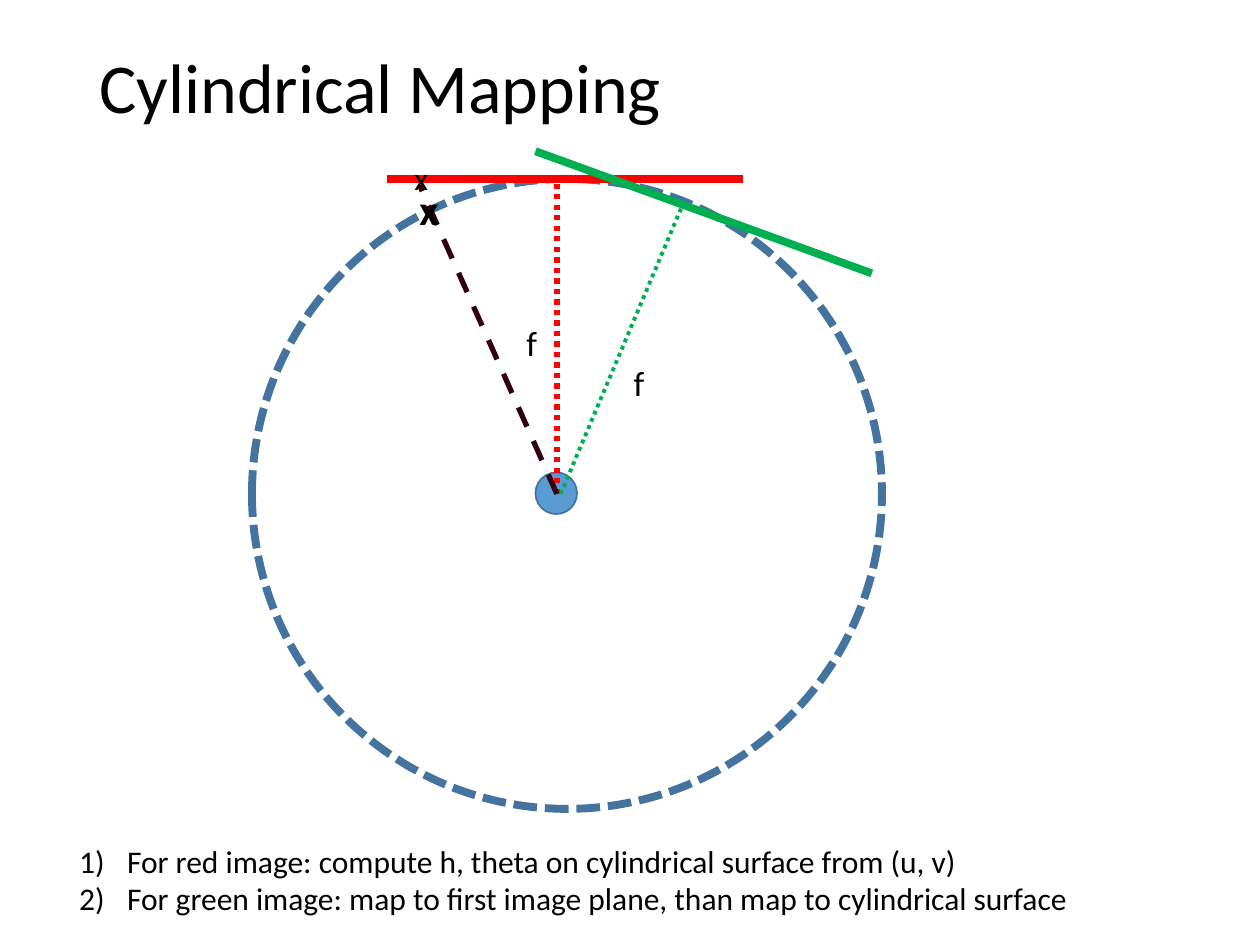
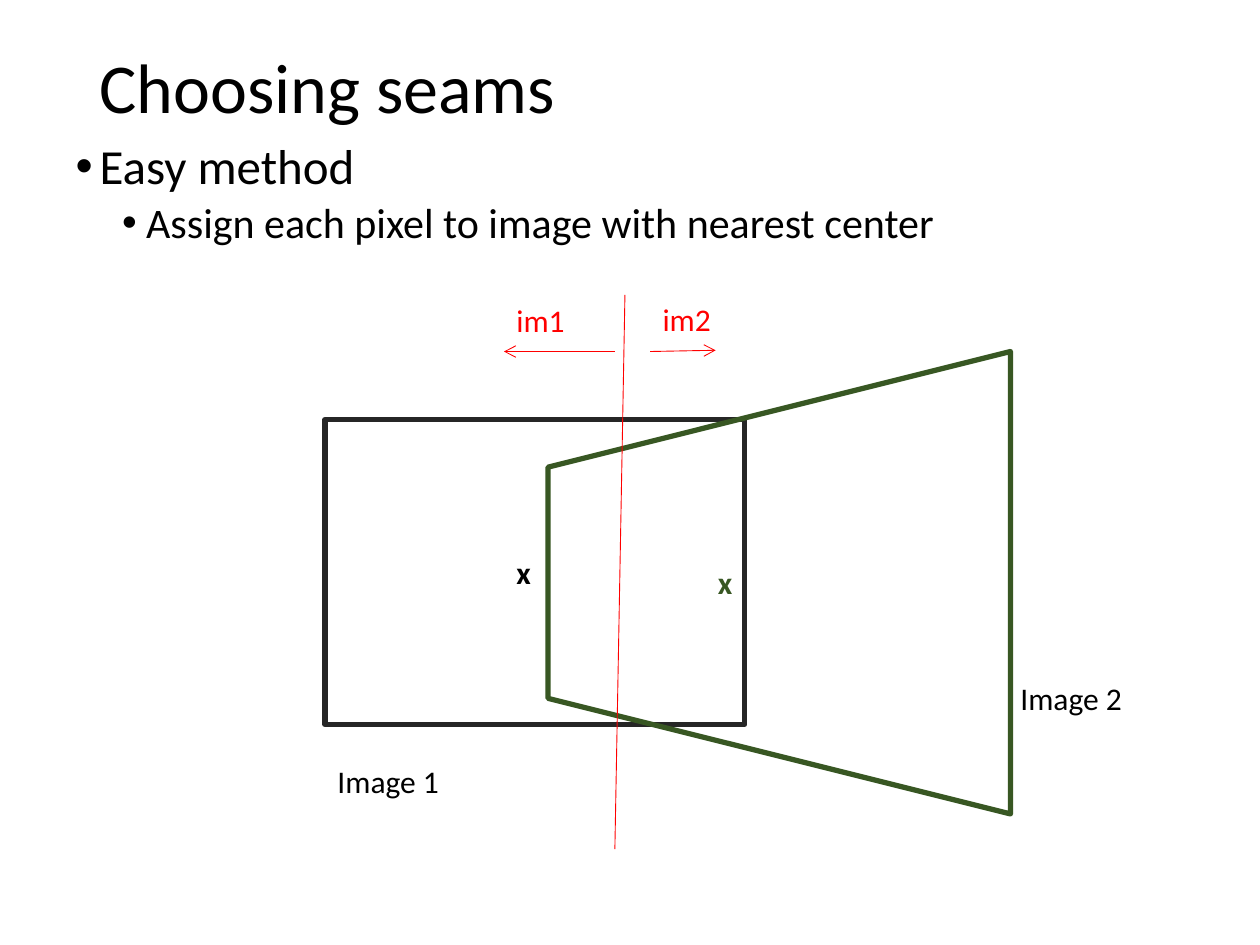
"""Build two slides on cylindrical mapping and choosing seams."""
from lxml import etree
from pptx import Presentation
from pptx.dml.color import RGBColor
from pptx.enum.dml import MSO_LINE
from pptx.enum.shapes import MSO_CONNECTOR, MSO_SHAPE
from pptx.enum.text import MSO_ANCHOR, MSO_AUTO_SIZE, PP_ALIGN
from pptx.oxml.ns import qn
from pptx.util import Inches, Pt

STRAIGHT = MSO_CONNECTOR.STRAIGHT
OVAL, RECTANGLE, TRAPEZOID = MSO_SHAPE.OVAL, MSO_SHAPE.RECTANGLE, MSO_SHAPE.TRAPEZOID
SHORT_DASH, DOT, DASH = MSO_LINE.SQUARE_DOT, MSO_LINE.ROUND_DOT, MSO_LINE.DASH
MIDDLE, LEFT = MSO_ANCHOR.MIDDLE, PP_ALIGN.LEFT
NO_FIT, GROW = MSO_AUTO_SIZE.NONE, MSO_AUTO_SIZE.SHAPE_TO_FIT_TEXT
FONT = "Calibri"
TITLE_ONLY, TITLE_AND_BODY = 5, 1
COLORS = {
    "black": "000000", "white": "FFFFFF", "red": "FF0000", "green": "00B050",
    "blue": "5B9BD5", "steel": "43739E", "maroon": "32000C",
    "charcoal": "262626", "forest": "385723",
}
TITLE_BOX = (0.69, 0, 8.62, 1.45)

MAPPING_TITLE = "Cylindrical Mapping"
CYLINDER_BOX = (2, 1.42, 5, 5)
EYE_BOX = (4.25, 3.75, 0.33, 0.33)
EYE = (4.42, 3.92)
IMAGE_PLANES = [
    ((3.07, 1.42), (5.9, 1.42), "red", 4.5),
    ((4.25, 1.2), (6.92, 2.17), "green", 4.5),
]
RAYS = [
    (EYE, (4.42, 1.42), "red", 3, DOT),
    ((4.45, 3.92), (5.42, 1.62), "green", 2.25, DOT),
    (EYE, (3.33, 1.47), "maroon", 3, DASH),
]
MAPPING_LABELS = [
    ("f", (4.08, 2.5, 0.28, 0.44), 20, "black", False),
    ("f", (4.93, 2.82, 0.28, 0.44), 20, "black", False),
    ("x", (3.19, 1.21, 0.33, 0.4), 18, "black", False),
    ("x", (3.23, 1.41, 0.39, 0.5), 24, "black", True),
]
STEPS_BOX = (0.53, 6.63, 8.81, 0.71)
STEPS = [
    "For red image: compute h, theta on cylindrical surface from (u, v)",
    "For green image: map to first image plane, than map to cylindrical surface",
]

SEAMS_TITLE = "Choosing seams"
METHOD_BOX = (0.5, 1.08, 9, 5.62)
METHOD = [("Easy method", 0, 28, 0.19, 0),
          ("Assign each pixel to image with nearest center", 1, 24, 0.56, 3.8)]
IMAGE_1_BOX = (2.58, 3.33, 3.33, 2.42)
IMAGE_2_BOX = (4.35, 2.79, 3.67, 3.67)
SEAM = ((4.96, 2.34), (4.88, 6.74))
SIDES = [((4.88, 2.79), (4, 2.79)), ((5.16, 2.79), (5.68, 2.78))]
SEAM_LABELS = [
    ("Image 1", (2.58, 6, 1.11, 0.4), 18, "black", False),
    ("Image 2", (8, 5.34, 1.11, 0.4), 18, "black", False),
    ("x", (4, 4.34, 0.34, 0.4), 18, "black", True),
    ("x", (5.6, 4.42, 0.34, 0.4), 18, "forest", True),
    ("im1", (4, 2.34, 0.61, 0.4), 18, "red", False),
    ("im2", (5.16, 2.33, 0.61, 0.4), 18, "red", False),
]


def rgb(color):
    return RGBColor.from_string(COLORS[color])


def style(paragraph, size, color="black", bold=False):
    font = paragraph.font
    font.name, font.size, font.bold = FONT, Pt(size), bold
    font.color.rgb = rgb(color)


def add_marker(paragraph, tag, attributes, left, hanging):
    properties = paragraph._p.get_or_add_pPr()
    properties.set("marL", str(Inches(left)))
    properties.set("indent", str(-Inches(hanging)))
    etree.SubElement(properties, qn(tag), attributes)


def place(shape, box):
    shape.left, shape.top, shape.width, shape.height = map(Inches, box)


def add_slide(deck, layout, title):
    slide = deck.slides.add_slide(deck.slide_layouts[layout])
    slide.background.fill.solid()
    slide.background.fill.fore_color.rgb = rgb("white")
    heading = slide.shapes.title
    place(heading, TITLE_BOX)
    frame = heading.text_frame
    frame.text = title
    frame.vertical_anchor, frame.auto_size = MIDDLE, NO_FIT
    paragraph = frame.paragraphs[0]
    paragraph.alignment, paragraph.line_spacing = LEFT, 0.9
    style(paragraph, 40)
    return slide


def add_outline(slide, kind, box, color, width, fill=None):
    shape = slide.shapes.add_shape(kind, *map(Inches, box))
    shape.shadow.inherit = False
    if fill:
        shape.fill.solid()
        shape.fill.fore_color.rgb = rgb(fill)
    else:
        shape.fill.background()
    shape.line.color.rgb = rgb(color)
    shape.line.width = Pt(width)
    return shape


def add_line(slide, start, end, color, width, dash=None, arrow=False):
    connector = slide.shapes.add_connector(STRAIGHT, *map(Inches, start + end))
    line = connector.line
    line.color.rgb, line.width = rgb(color), Pt(width)
    if dash:
        line.dash_style = dash
    properties = connector._element.spPr
    if arrow:
        etree.SubElement(properties.find(qn("a:ln")), qn("a:tailEnd"), type="arrow")
    etree.SubElement(properties, qn("a:effectLst"))


def add_text(slide, box):
    frame = slide.shapes.add_textbox(*map(Inches, box)).text_frame
    frame.word_wrap, frame.auto_size = False, GROW
    return frame


def add_labels(slide, labels):
    for text, box, size, color, bold in labels:
        paragraph = add_text(slide, box).paragraphs[0]
        paragraph.text = text
        style(paragraph, size, color, bold)


def fill_paragraphs(frame, texts):
    frame.text = "\n".join(texts)
    return frame.paragraphs


def build_mapping(deck):
    slide = add_slide(deck, TITLE_ONLY, MAPPING_TITLE)
    cylinder = add_outline(slide, OVAL, CYLINDER_BOX, "steel", 4.5)
    cylinder.line.dash_style = SHORT_DASH
    for plane in IMAGE_PLANES:
        add_line(slide, *plane)
    add_outline(slide, OVAL, EYE_BOX, "steel", 1, "blue")
    for ray in RAYS:
        add_line(slide, *ray)
    add_labels(slide, MAPPING_LABELS)
    for paragraph in fill_paragraphs(add_text(slide, STEPS_BOX), STEPS):
        add_marker(paragraph, "a:buAutoNum", {"type": "arabicParenR"}, 0.38, 0.38)
        style(paragraph, 18)


def build_seams(deck):
    slide = add_slide(deck, TITLE_AND_BODY, SEAMS_TITLE)
    body = slide.placeholders[1]
    place(body, METHOD_BOX)
    body.text_frame.auto_size = NO_FIT
    paragraphs = fill_paragraphs(body.text_frame, [item[0] for item in METHOD])
    for paragraph, (_, level, size, left, before) in zip(paragraphs, METHOD):
        paragraph.level = level
        add_marker(paragraph, "a:buChar", {"char": "•"}, left, 0.19)
        paragraph.line_spacing, paragraph.space_before = 0.9, Pt(before)
        style(paragraph, size)
    add_outline(slide, RECTANGLE, IMAGE_1_BOX, "charcoal", 3)
    add_outline(slide, TRAPEZOID, IMAGE_2_BOX, "forest", 3).rotation = 270
    add_line(slide, *SEAM, "red", 0.5)
    for side in SIDES:
        add_line(slide, *side, "red", 0.5, arrow=True)
    add_labels(slide, SEAM_LABELS)


def main():
    deck = Presentation()
    deck.slide_width, deck.slide_height = Inches(10), Inches(7.5)
    build_mapping(deck)
    build_seams(deck)
    deck.save("out.pptx")


if __name__ == "__main__":
    main()
